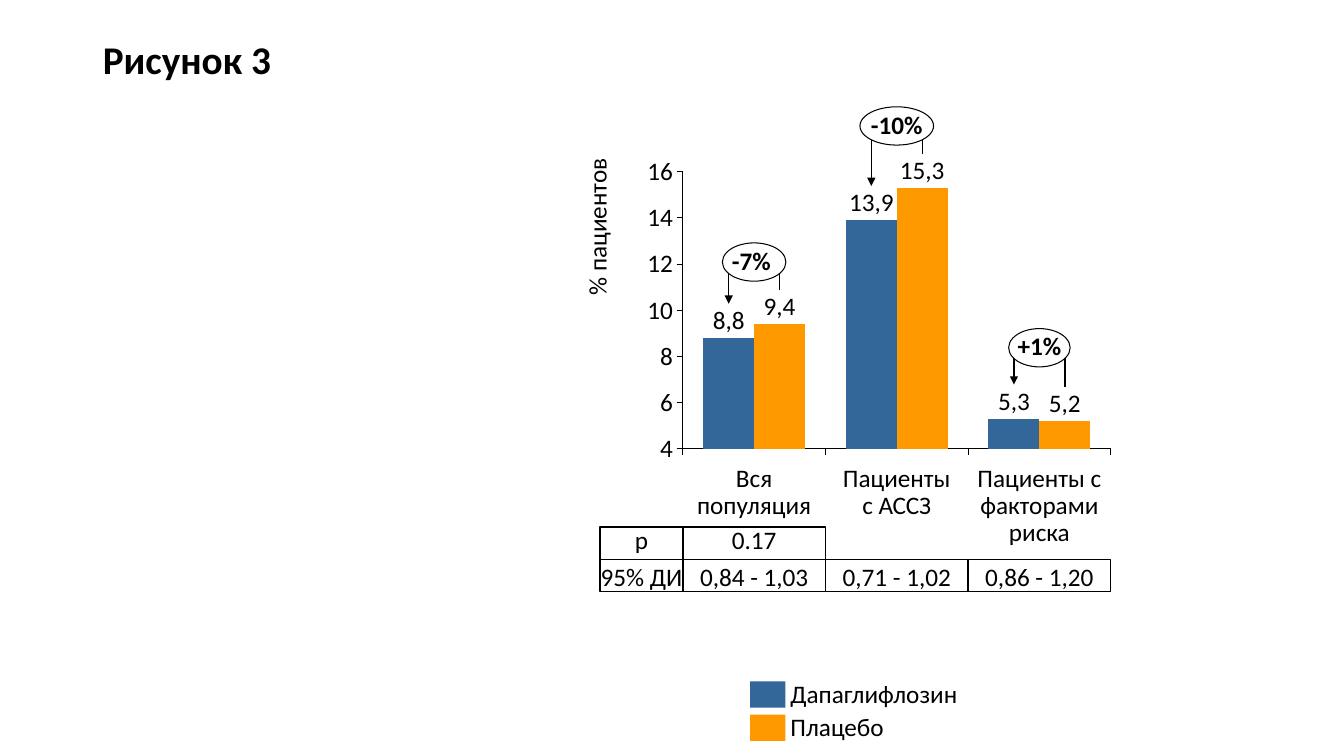
from pptx import Presentation
from pptx.chart.data import CategoryChartData
from pptx.dml.color import RGBColor
from pptx.enum.chart import XL_CHART_TYPE, XL_TICK_LABEL_POSITION as TICK_LABEL, XL_TICK_MARK
from pptx.enum.shapes import MSO_CONNECTOR, MSO_SHAPE
from pptx.enum.text import MSO_ANCHOR as ANCHOR, MSO_AUTO_SIZE, PP_ALIGN as ALIGN
from pptx.oxml import parse_xml
from pptx.oxml.ns import nsdecls, qn
from pptx.util import Inches, Pt

FONT = "Calibri"
BLACK, WHITE, BLUE, ORANGE = "000000", "FFFFFF", "336699", "FF9900"
CHART = (6.17, 1.53, 4.94, 3.1)
PLOT = {"x": 0.122, "y": 0.056, "w": 0.859, "h": 0.887}
PLOT_LEFT = CHART[0] + PLOT["x"] * CHART[2]
PLOT_HEIGHT = PLOT["h"] * CHART[3]
PLOT_BOTTOM = CHART[1] + PLOT["y"] * CHART[3] + PLOT_HEIGHT
GROUP_WIDTH = PLOT["w"] * CHART[2] / 3
GAP = 80
BAR_WIDTH = GROUP_WIDTH / (2 + GAP / 100)
AXIS_MIN, AXIS_MAX = 4, 16

DRUGS = [("Дапаглифлозин", BLUE), ("Плацебо", ORANGE)]
# category, label width and height, values, change, oval width, bracket height
GROUPS = [
    ("Вся популяция", 1.14, 0.54, (8.8, 9.4), "-7% ", 0.63, 2.6),
    ("Пациенты с АССЗ", 1.14, 0.54, (13.9, 15.3), "-10%", 0.73, 1.25),
    ("Пациенты с факторами риска", 1.3, 0.81, (5.3, 5.2), "+1%", 0.61, 3.45),
]
TABLE_ROWS = [["p", "0.17"], ["95% ДИ", "0,84 - 1,03", "0,71 - 1,02", "0,86 - 1,20"]]


def rgb(color):
    return RGBColor.from_string(color)


def box(left, top, width, height):
    return Inches(left), Inches(top), Inches(width), Inches(height)


def style_font(font, size=18, bold=False):
    font.name, font.size, font.bold = FONT, Pt(size), bold
    font.color.rgb = rgb(BLACK)


def write(shape, text, align=ALIGN.CENTER, anchor=ANCHOR.MIDDLE, wrap=False,
          bold=False, size=18, insets=(0, 0, 0, 0)):
    tf = shape.text_frame
    tf.auto_size = MSO_AUTO_SIZE.NONE
    tf.word_wrap, tf.vertical_anchor = wrap, anchor
    tf.margin_left, tf.margin_top, tf.margin_right, tf.margin_bottom = map(Inches, insets)
    p = tf.paragraphs[0]
    p.text, p.alignment, p.line_spacing = text, align, 0.9
    style_font(p.font, size, bold)


def add_text(slide, area, text, **options):
    s = slide.shapes.add_textbox(*box(*area))
    write(s, text, **options)
    return s


def add_shape(slide, kind, area, fill, line_width=0):
    s = slide.shapes.add_shape(kind, *box(*area))
    s.shadow.inherit = False
    s.fill.solid()
    s.fill.fore_color.rgb = rgb(fill)
    if line_width:
        s.line.color.rgb = rgb(BLACK)
        s.line.width = Pt(line_width)
    else:
        s.line.fill.background()
    return s


def add_line(slide, x1, y1, x2, y2, arrow=False):
    c = slide.shapes.add_connector(MSO_CONNECTOR.STRAIGHT, *box(x1, y1, x2, y2))
    c.line.color.rgb = rgb(BLACK)
    c.line.width = Pt(1)
    if arrow:
        c.line._get_or_add_ln().append(parse_xml(f'<a:tailEnd {nsdecls("a")} type="triangle"/>'))
    c._element.spPr.append(parse_xml(f'<a:effectLst {nsdecls("a")}/>'))


def set_plot_area(chart):
    area = chart._chartSpace.find(".//" + qn("c:plotArea"))
    for old in area.findall(qn("c:layout")):
        area.remove(old)
    sizes = "".join(f'<c:{key} val="{value}"/>' for key, value in PLOT.items())
    area.insert(0, parse_xml(
        f'<c:layout {nsdecls("c")}><c:manualLayout><c:layoutTarget val="inner"/>'
        f'<c:xMode val="edge"/><c:yMode val="edge"/>{sizes}</c:manualLayout></c:layout>'))


def add_bar_chart(slide):
    data = CategoryChartData()
    data.categories = [group[0] for group in GROUPS]
    for i, (drug, _) in enumerate(DRUGS):
        data.add_series(drug, [group[3][i] for group in GROUPS])
    chart = slide.shapes.add_chart(XL_CHART_TYPE.COLUMN_CLUSTERED, *box(*CHART), data).chart
    chart.has_title = chart.has_legend = False
    style_font(chart.font, 10)
    set_plot_area(chart)
    plot = chart.plots[0]
    plot.gap_width, plot.overlap, plot.vary_by_categories = GAP, 0, False
    for series, (_, color) in zip(plot.series, DRUGS):
        series.format.fill.solid()
        series.format.fill.fore_color.rgb = rgb(color)
    for axis in (chart.category_axis, chart.value_axis):
        axis.has_major_gridlines = False
        axis.major_tick_mark, axis.minor_tick_mark = XL_TICK_MARK.OUTSIDE, XL_TICK_MARK.NONE
        axis.format.line.color.rgb = rgb(BLACK)
        axis.format.line.width = Pt(0.75)
        style_font(axis.tick_labels.font)
    chart.category_axis.tick_label_position = TICK_LABEL.NONE
    values = chart.value_axis
    values.minimum_scale, values.maximum_scale, values.major_unit = AXIS_MIN, AXIS_MAX, 2
    values.tick_labels.number_format = "#,##0"
    values.tick_labels.number_format_is_linked = False


def annotate_group(slide, center, group):
    """Category text, value labels and the bracket with the relative change."""
    category, width, height, values, change, oval_width, bracket = group
    add_text(slide, (center - width / 2, 4.62, width, height), category,
             anchor=ANCHOR.TOP, wrap=True)
    xs = center - BAR_WIDTH / 2, center + BAR_WIDTH / 2
    add_line(slide, xs[0], bracket, xs[1], bracket)
    for x, value, arrow in zip(xs, values, (True, False)):
        bar_top = PLOT_BOTTOM - (value - AXIS_MIN) / (AXIS_MAX - AXIS_MIN) * PLOT_HEIGHT
        label_width = 0.52 if value >= 10 else 0.39
        add_line(slide, x, bracket, x, bar_top - 0.34, arrow)
        add_text(slide, (x - label_width / 2, bar_top - 0.3, label_width, 0.27),
                 str(value).replace(".", ","), anchor=ANCHOR.BOTTOM, insets=(0.04, 0, 0.04, 0))
    oval = add_shape(slide, MSO_SHAPE.OVAL,
                     (center - oval_width / 2, bracket - 0.19, oval_width, 0.38), WHITE, 0.75)
    write(oval, change, bold=True)


def add_statistics(slide):
    """Ragged rows of cells aligned with the groups of bars."""
    head_width, row_height = 0.82, 0.32
    for row, cells in enumerate(TABLE_ROWS):
        insets = (0, 0.05, 0, 0) if row else (0, 0, 0, 0.05)
        for col, text in enumerate(cells):
            left = PLOT_LEFT + (col - 1) * GROUP_WIDTH if col else PLOT_LEFT - head_width
            area = (left, 5.23 + row * row_height, GROUP_WIDTH if col else head_width, row_height)
            write(add_shape(slide, MSO_SHAPE.RECTANGLE, area, WHITE, 1), text, insets=insets)


def add_legend(slide):
    for i, (drug, color) in enumerate(DRUGS):
        top = 6.76 + i * 0.33
        add_shape(slide, MSO_SHAPE.RECTANGLE, (7.44, top, 0.35, 0.26), color)
        add_text(slide, (7.84, top, 1.66, 0.27), drug, align=ALIGN.LEFT)


def main():
    prs = Presentation()
    prs.slide_width, prs.slide_height = Inches(13.33), Inches(7.5)
    slide = prs.slides.add_slide(prs.slide_layouts[5])
    title = slide.shapes.title
    title.left, title.top, title.width, title.height = box(0.92, 0.4, 2.67, 0.43)
    write(title, "Рисунок 3", align=ALIGN.LEFT, wrap=True, bold=True, size=28,
          insets=(0.1, 0.05, 0.1, 0.05))
    add_bar_chart(slide)
    axis_title = add_text(slide, (5.8, 1.57, 0.27, 1.36), "% пациентов",
                          align=ALIGN.RIGHT, anchor=ANCHOR.BOTTOM)
    axis_title.text_frame._txBody.bodyPr.set("vert", "vert270")
    for i, group in enumerate(GROUPS):
        annotate_group(slide, PLOT_LEFT + (i + 0.5) * GROUP_WIDTH, group)
    add_statistics(slide)
    add_legend(slide)
    prs.save("out.pptx")


if __name__ == "__main__":
    main()
